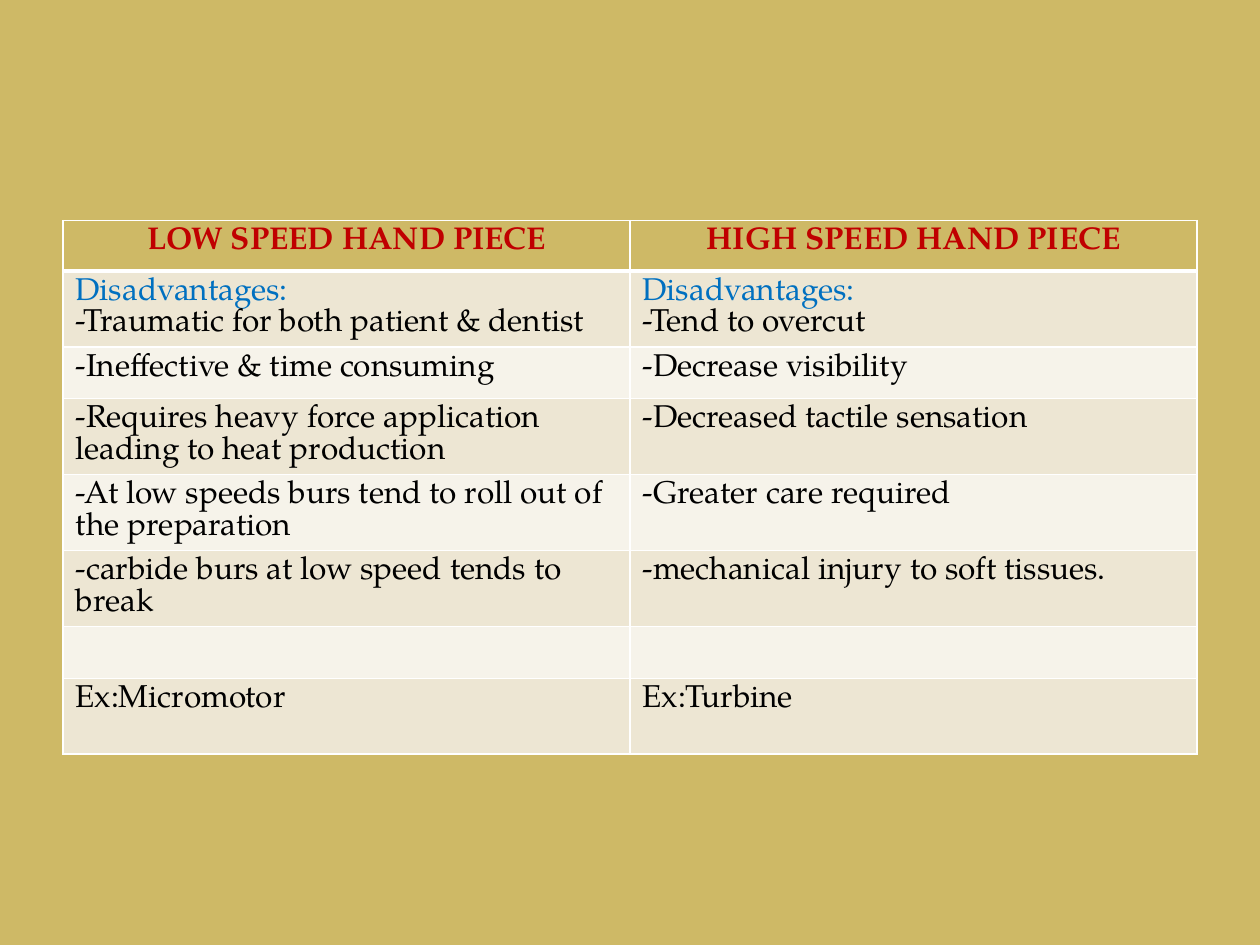
from pptx import Presentation
from pptx.dml.color import RGBColor
from pptx.enum.text import PP_ALIGN
from pptx.oxml.ns import qn
from pptx.util import Inches, Pt
from lxml import etree

CENTER, LEFT = PP_ALIGN.CENTER, PP_ALIGN.LEFT
FONT = "TeX Gyre Pagella"
COLORS = {
    "background": "CEB966",
    "header": "C00000",
    "subheading": "0070C0",
    "body": "000000",
    "band_dark": "EDE6D3",
    "band_light": "F6F3EA",
    "border": "FFFFFF",
}
SUBHEADING = "Disadvantages:"
# Row height, low speed text, high speed text
ROWS = [
    (0.4, "LOW SPEED HAND PIECE", "HIGH SPEED HAND PIECE"),
    (0.6, SUBHEADING + "\n-Traumatic for both patient & dentist",
     SUBHEADING + "\n-Tend to overcut"),
    (0.41, "-Ineffective & time consuming", "-Decrease visibility"),
    (0.6, "-Requires heavy force application leading to heat production",
     "-Decreased tactile sensation"),
    (0.6, "-At low speeds burs tend to roll out of the preparation",
     "-Greater care required"),
    (0.6, "-carbide burs at low speed tends to break",
     "-mechanical injury to soft tissues."),
    (0.41, "", ""),
    (0.6, "Ex:Micromotor", "Ex:Turbine"),
]


def color(name):
    return RGBColor.from_string(COLORS[name])


def set_borders(cell, top, bottom):
    properties = cell._tc.get_or_add_tcPr()
    for side, width in (("L", 1), ("R", 1), ("T", top), ("B", bottom)):
        line = etree.SubElement(properties, qn(f"a:ln{side}"), w=str(Pt(width)))
        fill = etree.SubElement(line, qn("a:solidFill"))
        etree.SubElement(fill, qn("a:srgbClr"), val=COLORS["border"])


def write_cell(cell, text, is_header):
    cell.text_frame.text = text
    for paragraph in cell.text_frame.paragraphs:
        paragraph.alignment = CENTER if is_header else LEFT
        paragraph.font.size = Pt(18)
        for run in paragraph.runs:
            run.font.name = FONT
            run.font.size = Pt(18)
            run.font.bold = is_header
            role = "subheading" if run.text == SUBHEADING else "body"
            run.font.color.rgb = color("header" if is_header else role)


def add_comparison(slide):
    height = sum(row[0] for row in ROWS)
    table = slide.shapes.add_table(
        len(ROWS), 2, Inches(0.5), Inches(1.75), Inches(9), Inches(height)
    ).table
    for index, (row_height, *texts) in enumerate(ROWS):
        table.rows[index].height = Inches(row_height)
        # Header first, then alternating bands
        band = "band_dark" if index % 2 else "band_light"
        fill_name = band if index else "background"
        for column, text in enumerate(texts):
            cell = table.cell(index, column)
            set_borders(cell, 3 if index == 1 else 1, 3 if index == 0 else 1)
            cell.fill.solid()
            cell.fill.fore_color.rgb = color(fill_name)
            write_cell(cell, text, index == 0)


def main():
    presentation = Presentation()
    presentation.slide_width = Inches(10)
    presentation.slide_height = Inches(7.5)
    slide = presentation.slides.add_slide(presentation.slide_layouts[6])
    slide.background.fill.solid()
    slide.background.fill.fore_color.rgb = color("background")
    add_comparison(slide)
    presentation.save("out.pptx")


if __name__ == "__main__":
    main()
